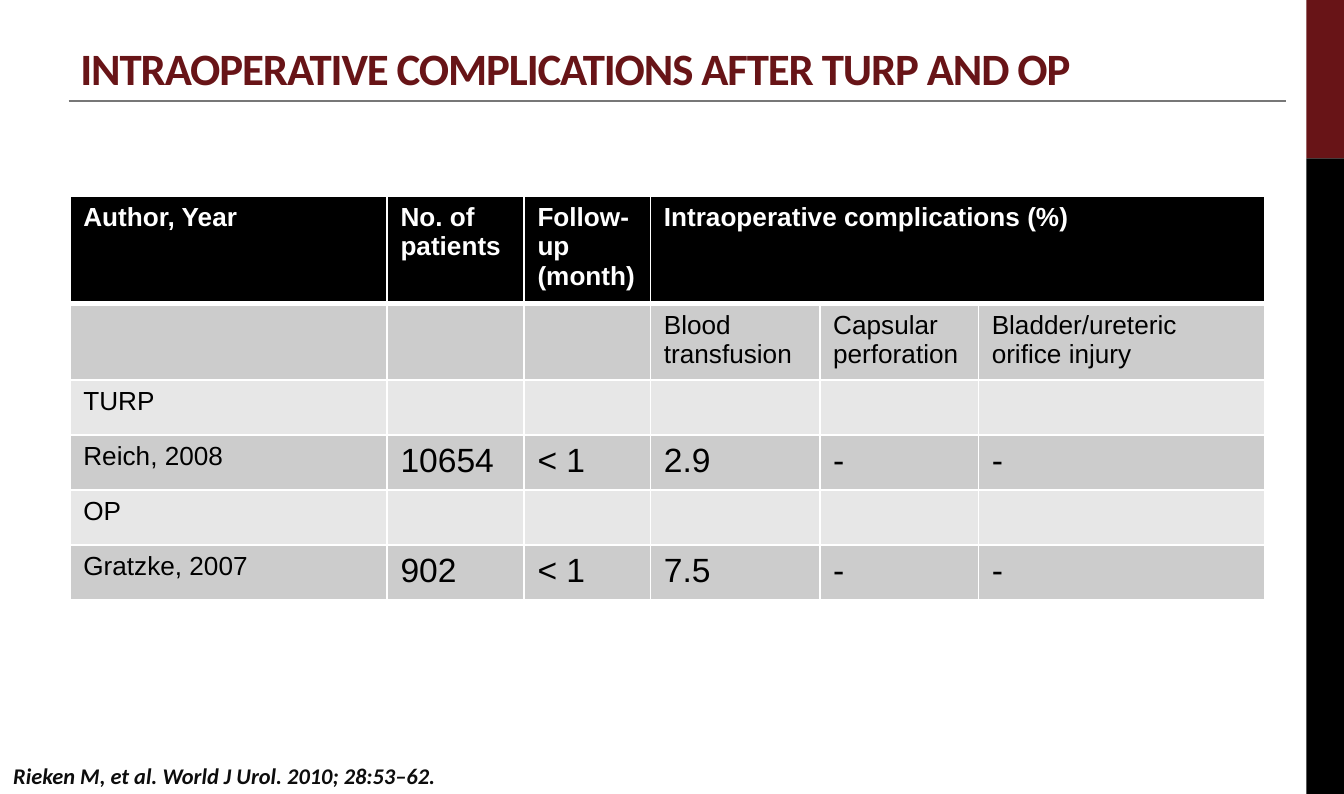
from lxml import etree
from pptx import Presentation
from pptx import util as u
from pptx.dml.color import RGBColor
from pptx.enum import shapes, text
from pptx.oxml.ns import qn

MAROON = RGBColor(0x68, 0x14, 0x17)
BLACK = RGBColor(0, 0, 0)
WHITE = RGBColor(0xFF, 0xFF, 0xFF)
INK = RGBColor(0x0D, 0x0D, 0x0D)
RULE = RGBColor(0x77, 0x77, 0x77)
BANDS = [RGBColor(0xCC, 0xCC, 0xCC), RGBColor(0xE7, 0xE7, 0xE7)]

# Content
TITLE = "INTRAOPERATIVE COMPLICATIONS AFTER TURP AND OP"
SOURCE = "Rieken M, et al. World J Urol. 2010; 28:53–62."
ROWS = [
    ["Author, Year", "No. of\npatients", "Follow-up\n(month)",
     "Intraoperative complications (%)", "", ""],
    ["", "", "", "Blood\ntransfusion", "Capsular\nperforation",
     "Bladder/ureteric\norifice injury"],
    ["TURP", "", "", "", "", ""],
    ["Reich, 2008", "10654", "< 1", "2.9", "-", "-"],
    ["OP", "", "", "", "", ""],
    ["Gratzke, 2007", "902", "< 1", "7.5", "-", "-"],
]
COL_WIDTHS = [2.36, 1.02, 0.94, 1.26, 1.18, 2.13]
ROW_HEIGHT = 0.41
SIDEBAR = [(0, 1.18, MAROON), (1.18, 4.73, BLACK)]


def write(tf, content, size=14, font="Arial", color=BLACK, bold=False,
          italic=False, spacing=None):
    for i, line in enumerate(content.split("\n")):
        p = tf.paragraphs[0] if i == 0 else tf.add_paragraph()
        r = p.add_run()
        r.text = line
        f = r.font
        f.size, f.name, f.bold, f.italic = u.Pt(size), font, bold, italic
        f.color.rgb = color
        if spacing is not None:
            r._r.get_or_add_rPr().set("spc", str(round(spacing * 100)))


def add_text(s, box, content, anchor, **fmt):
    tf = s.shapes.add_textbox(*map(u.Inches, box)).text_frame
    tf.word_wrap = True
    tf.vertical_anchor = anchor
    write(tf, content, **fmt)


def set_borders(cell, **widths):
    """Draw white cell borders; widths in points by side."""
    tcPr = cell._tc.get_or_add_tcPr()
    for i, (side, width) in enumerate(widths.items()):
        ln = etree.Element(qn("a:ln" + side), w=str(u.Pt(width)))
        fill = etree.SubElement(ln, qn("a:solidFill"))
        etree.SubElement(fill, qn("a:srgbClr"), val=str(WHITE))
        tcPr.insert(i, ln)


prs = Presentation()
prs.slide_width, prs.slide_height = u.Inches(10), u.Inches(5.91)
s = prs.slides.add_slide(prs.slide_layouts[6])

# Sidebar
for top, height, color in SIDEBAR:
    sp = s.shapes.add_shape(shapes.MSO_SHAPE.RECTANGLE, u.Inches(9.72),
                            u.Inches(top), u.Inches(0.28), u.Inches(height))
    sp.shadow.inherit = False
    sp.fill.solid()
    sp.fill.fore_color.rgb = color
    sp.line.fill.background()

# Title with rule, and source
add_text(s, (0.5, 0.13, 9.07, 0.62), TITLE, text.MSO_ANCHOR.BOTTOM,
         size=24, font="Calibri", color=MAROON, bold=True, spacing=-0.6)
rule = s.shapes.add_connector(shapes.MSO_CONNECTOR.STRAIGHT, u.Inches(0.51),
                              u.Inches(0.75), u.Inches(9.57), u.Inches(0.75))
rule.line.color.rgb = RULE
rule.line.width = u.Pt(1)
etree.SubElement(rule._element.spPr, qn("a:effectLst"))
add_text(s, (0, 5.63, 9.72, 0.28), SOURCE, text.MSO_ANCHOR.MIDDLE,
         size=12, font="Calibri", color=INK, bold=True, italic=True)

# Table
table = s.shapes.add_table(
    len(ROWS), len(COL_WIDTHS), u.Inches(0.52), u.Inches(1.46),
    u.Inches(sum(COL_WIDTHS)), u.Inches(ROW_HEIGHT * len(ROWS))).table
for col, width in zip(table.columns, COL_WIDTHS):
    col.width = u.Inches(width)
for i, row in enumerate(ROWS):
    table.rows[i].height = u.Inches(ROW_HEIGHT)
    header = i == 0
    for j, content in enumerate(row):
        cell = table.cell(i, j)
        cell.fill.solid()
        cell.fill.fore_color.rgb = BLACK if header else BANDS[(i - 1) % 2]
        set_borders(cell, L=1, R=1, T=3 if i == 1 else 1, B=3 if header else 1)
        if content:
            is_value = i > 1 and j > 0
            write(cell.text_frame, content, size=18 if is_value else 14,
                  color=WHITE if header else BLACK, bold=header)
table.cell(0, 3).merge(table.cell(0, 5))

prs.save("out.pptx")
